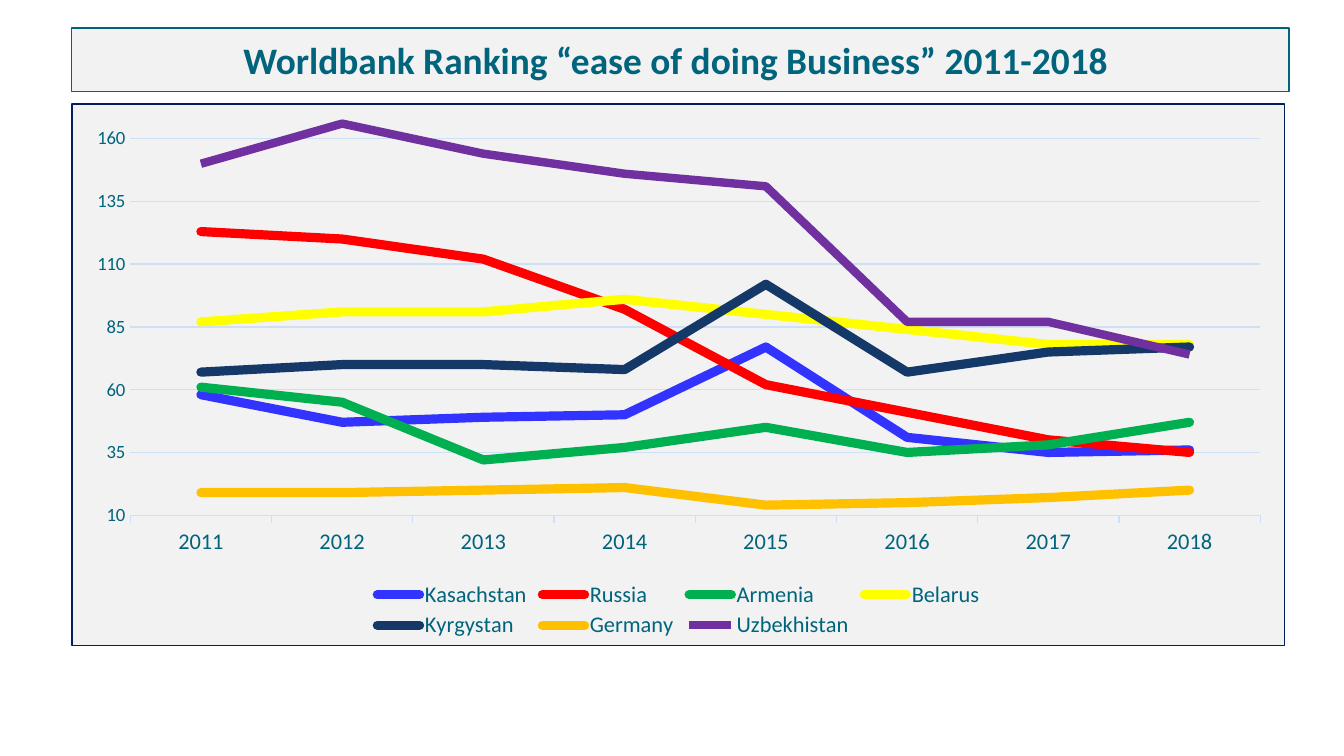
from lxml import etree
from pptx import Presentation
from pptx.chart.data import CategoryChartData
from pptx.dml.color import RGBColor
from pptx.enum.chart import XL_CHART_TYPE as ChartType, XL_LEGEND_POSITION as LegendPos
from pptx.enum.chart import XL_TICK_MARK as TickMark
from pptx.enum.text import MSO_ANCHOR as Anchor, MSO_AUTO_SIZE as AutoSize, PP_ALIGN as Align
from pptx.oxml import parse_xml
from pptx.oxml.ns import nsdecls, qn
from pptx.util import Cm, Pt

TEAL, NAVY, GREY, PALE = "00647D", "002060", "F2F2F2", "CEE0F6"

YEARS = [str(year) for year in range(2011, 2019)]
# country, line colour, line width, line cap, ranks
COUNTRIES = [
    ("Kasachstan", "3333FF", 4.94, "rnd", (58, 47, 49, 50, 77, 41, 35, 36)),
    ("Russia", "FF0000", 4.94, "rnd", (123, 120, 112, 92, 62, 51, 40, 35)),
    ("Armenia", "00B050", 4.94, "rnd", (61, 55, 32, 37, 45, 35, 38, 47)),
    ("Belarus", "FFFF00", 4.94, "rnd", (87, 91, 91, 96, 90, 84, 78, 78)),
    ("Kyrgystan", "143968", 4.94, "rnd", (67, 70, 70, 68, 102, 67, 75, 77)),
    ("Germany", "FFC000", 4.94, "rnd", (19, 19, 20, 21, 14, 15, 17, 20)),
    ("Uzbekhistan", "7030A0", 4.5, "flat", (150, 166, 154, 146, 141, 87, 87, 74)),
]


def color(value):
    return RGBColor.from_string(value)


def area_format(fill, border=None):
    """Fill and outline for a chart part."""
    line = "<a:noFill/>"
    if border:
        line = f'<a:solidFill><a:srgbClr val="{border}"/></a:solidFill>'
    return parse_xml(
        f'<c:spPr {nsdecls("c", "a")}><a:solidFill><a:srgbClr val="{fill}"/></a:solidFill>'
        f'<a:ln w="{Pt(0.75)}">{line}</a:ln></c:spPr>')


def manual_layout(x, y, w, h, inner=False):
    """Place a chart part by fractions of the chart's size."""
    layout = etree.Element(qn("c:layout"))
    manual = etree.SubElement(layout, qn("c:manualLayout"))
    settings = [("layoutTarget", "inner")] if inner else []
    settings += [("xMode", "edge"), ("yMode", "edge"), ("x", x), ("y", y), ("w", w), ("h", h)]
    for tag, value in settings:
        etree.SubElement(manual, qn(f"c:{tag}")).set("val", str(value))
    return layout


class RankingDeck:
    font = "Calibri"

    def __init__(self, width, height):
        self.deck = Presentation()
        self.deck.slide_width, self.deck.slide_height = Cm(width), Cm(height)
        self.page = self.deck.slides.add_slide(self.deck.slide_layouts[5])

    def style_font(self, font, size, value, bold=False):
        font.name, font.size, font.bold = self.font, Pt(size), bold
        font.color.rgb = color(value)

    def title(self, text, left, top, width, height):
        box = self.page.shapes.title
        box.left, box.top, box.width, box.height = map(Cm, (left, top, width, height))
        box.fill.solid()
        box.fill.fore_color.rgb = color(GREY)
        box.line.color.rgb = color(TEAL)
        box.line.width = Pt(0.75)
        frame = box.text_frame
        frame.auto_size, frame.word_wrap = AutoSize.NONE, True
        frame.vertical_anchor = Anchor.MIDDLE
        frame.margin_left = frame.margin_top = frame.margin_right = frame.margin_bottom = 0
        para = frame.paragraphs[0]
        para.text, para.alignment = text, Align.CENTER
        self.style_font(para.font, 20, TEAL, bold=True)

    def line_chart(self, left, top, width, height):
        data = CategoryChartData()
        data.categories = YEARS
        for name, *_, ranks in COUNTRIES:
            data.add_series(name, ranks)
        chart = self.page.shapes.add_chart(
            ChartType.LINE, *map(Cm, (left, top, width, height)), data).chart
        chart.has_title = False
        self.style_font(chart.font, 10, "143968")

        # Series lines
        for series, (_, value, weight, cap, _) in zip(chart.plots[0].series, COUNTRIES):
            series.smooth = False
            line = series.format.line
            line.color.rgb = color(value)
            line.width = Pt(weight)
            series._element.find(qn("c:spPr")).find(qn("a:ln")).set("cap", cap)

        self.axes(chart)
        self.legend(chart)

        # Plot position and backgrounds
        root = chart._chartSpace
        plot_area = root.chart.plotArea
        for old in plot_area.findall(qn("c:layout")):
            plot_area.remove(old)
        plot_area.insert(0, manual_layout(0.048, 0.018, 0.932, 0.742, inner=True))
        plot_area.append(area_format(GREY))
        root.chart.addnext(area_format(GREY, NAVY))

    def axes(self, chart):
        years, ranks = chart.category_axis, chart.value_axis
        self.style_font(years.tick_labels.font, 12, TEAL)
        self.style_font(ranks.tick_labels.font, 10, TEAL)
        years.major_tick_mark = TickMark.OUTSIDE
        ranks.major_tick_mark = TickMark.NONE
        ranks.minimum_scale, ranks.maximum_scale, ranks.major_unit = 10, 170, 25
        ranks.format.line.fill.background()
        ranks.has_major_gridlines = True
        for line in (years.format.line, ranks.major_gridlines.format.line):
            line.color.rgb = color(PALE)
            line.width = Pt(0.75)

    def legend(self, chart):
        chart.has_legend = True
        legend = chart.legend
        legend.position = LegendPos.BOTTOM
        legend.include_in_layout = False
        self.style_font(legend.font, 12, TEAL)
        node = legend._element
        for old in node.findall(qn("c:layout")):
            node.remove(old)
        node.find(qn("c:legendPos")).addnext(manual_layout(0.245, 0.875, 0.51, 0.12))


def main():
    ranking = RankingDeck(25.4, 14.29)
    # The trailing space is part of the centred heading
    ranking.title("Worldbank Ranking “ease of doing Business” 2011-2018 ", 1.35, 0.53, 23.01, 1.2)
    ranking.line_chart(1.35, 1.95, 22.94, 10.26)
    ranking.deck.save("out.pptx")


if __name__ == "__main__":
    main()
